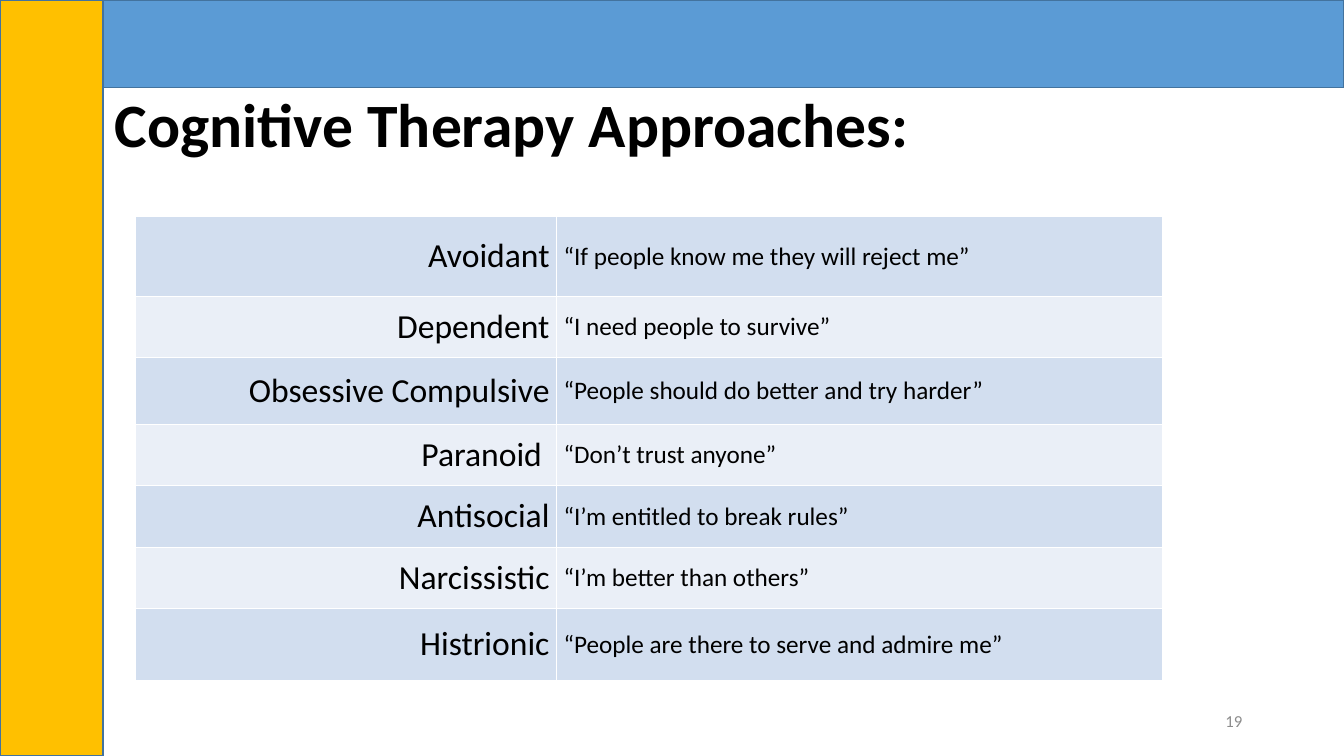
from lxml import etree
from pptx import Presentation
from pptx import util as u
from pptx.dml.color import RGBColor
from pptx.enum import shapes, text
from pptx.oxml import ns

COLORS = {
    "blue": "5B9BD5", "gold": "FFC000", "outline": "43739E",
    "text": "000000", "number": "8C8C8C", "border": "FFFFFF",
    "odd_row": "D2DEEF", "even_row": "EAEFF7",
}
BELIEFS = [
    ("Avoidant", "“If people know me they will reject me”", 0.79),
    ("Dependent", "“I need people to survive”", 0.61),
    ("Obsessive Compulsive", "“People should do better and try harder”", 0.66),
    ("Paranoid ", "“Don’t trust anyone”", 0.61),
    ("Antisocial", "“I’m entitled to break rules”", 0.61),
    ("Narcissistic", "“I’m better than others”", 0.61),
    ("Histrionic", "“People are there to serve and admire me”", 0.71),
]
COLUMN_WIDTHS = (4.18, 6.01)
LEFT, RIGHT = text.PP_ALIGN.LEFT, text.PP_ALIGN.RIGHT


def rgb(name):
    return RGBColor.from_string(COLORS[name])


def inches(*lengths):
    return [u.Inches(length) for length in lengths]


def write(frame, words, size, align=LEFT, color="text", bold=False):
    frame.text = words
    para = frame.paragraphs[0]
    para.alignment = align
    font = para.runs[0].font
    values = {"name": "Calibri", "size": u.Pt(size), "bold": bold}
    for name, value in values.items():
        setattr(font, name, value)
    font.color.rgb = rgb(color)
    return para


def add_band(page, place, color):
    band = page.shapes.add_shape(shapes.MSO_SHAPE.RECTANGLE, *inches(*place))
    band.shadow.inherit = False
    band.fill.solid()
    band.fill.fore_color.rgb = rgb(color)
    band.line.color.rgb = rgb("outline")
    band.line.width = u.Pt(1)


def set_title(page, words):
    title = page.shapes.title
    title.left, title.top, title.width, title.height = inches(1.04, 0.89, 11.5, 1.45)
    frame = title.text_frame
    frame.word_wrap = True
    frame.auto_size = text.MSO_AUTO_SIZE.NONE
    frame.vertical_anchor = text.MSO_ANCHOR.TOP
    write(frame, words, 44, bold=True).line_spacing = 0.9


def add_page_number(page, number):
    box = page.shapes.add_textbox(*inches(9.42, 6.95, 3, 0.4))
    frame = box.text_frame
    frame.word_wrap = True
    frame.vertical_anchor = text.MSO_ANCHOR.MIDDLE
    write(frame, number, 12, RIGHT, "number")


def set_borders(cell):
    properties = cell._tc.get_or_add_tcPr()
    for side in ("lnL", "lnR", "lnT", "lnB"):
        line = etree.SubElement(properties, ns.qn(f"a:{side}"), w=str(u.Pt(1)))
        fill = etree.SubElement(line, ns.qn("a:solidFill"))
        etree.SubElement(fill, ns.qn("a:srgbClr"), val=COLORS["border"])


def fill_cell(cell, words, size, align, color):
    set_borders(cell)
    cell.fill.solid()
    cell.fill.fore_color.rgb = rgb(color)
    cell.vertical_anchor = text.MSO_ANCHOR.MIDDLE
    cell.margin_left = cell.margin_right = u.Inches(0.07)
    cell.margin_top = cell.margin_bottom = u.Inches(0.04)
    write(cell.text_frame, words, size, align)


def add_belief_table(page):
    height = sum(row[2] for row in BELIEFS)
    place = inches(1.34, 2.15, sum(COLUMN_WIDTHS), height)
    table = page.shapes.add_table(len(BELIEFS), len(COLUMN_WIDTHS), *place).table
    table.first_row = False
    for column, width in zip(table.columns, COLUMN_WIDTHS):
        column.width = u.Inches(width)
    for index, (disorder, belief, row_height) in enumerate(BELIEFS):
        table.rows[index].height = u.Inches(row_height)
        color = "even_row" if index % 2 else "odd_row"
        fill_cell(table.cell(index, 0), disorder, 24, RIGHT, color)
        fill_cell(table.cell(index, 1), belief, 18, LEFT, color)


def main():
    deck = Presentation()
    deck.slide_width, deck.slide_height = inches(13.33, 7.5)
    page = deck.slides.add_slide(deck.slide_layouts.get_by_name("Title Only"))
    add_band(page, (0, 0, 13.33, 0.87), "blue")
    add_band(page, (0, 0, 1.02, 7.5), "gold")
    set_title(page, "Cognitive Therapy Approaches:")
    add_page_number(page, "19")
    add_belief_table(page)
    deck.save("out.pptx")


if __name__ == "__main__":
    main()
